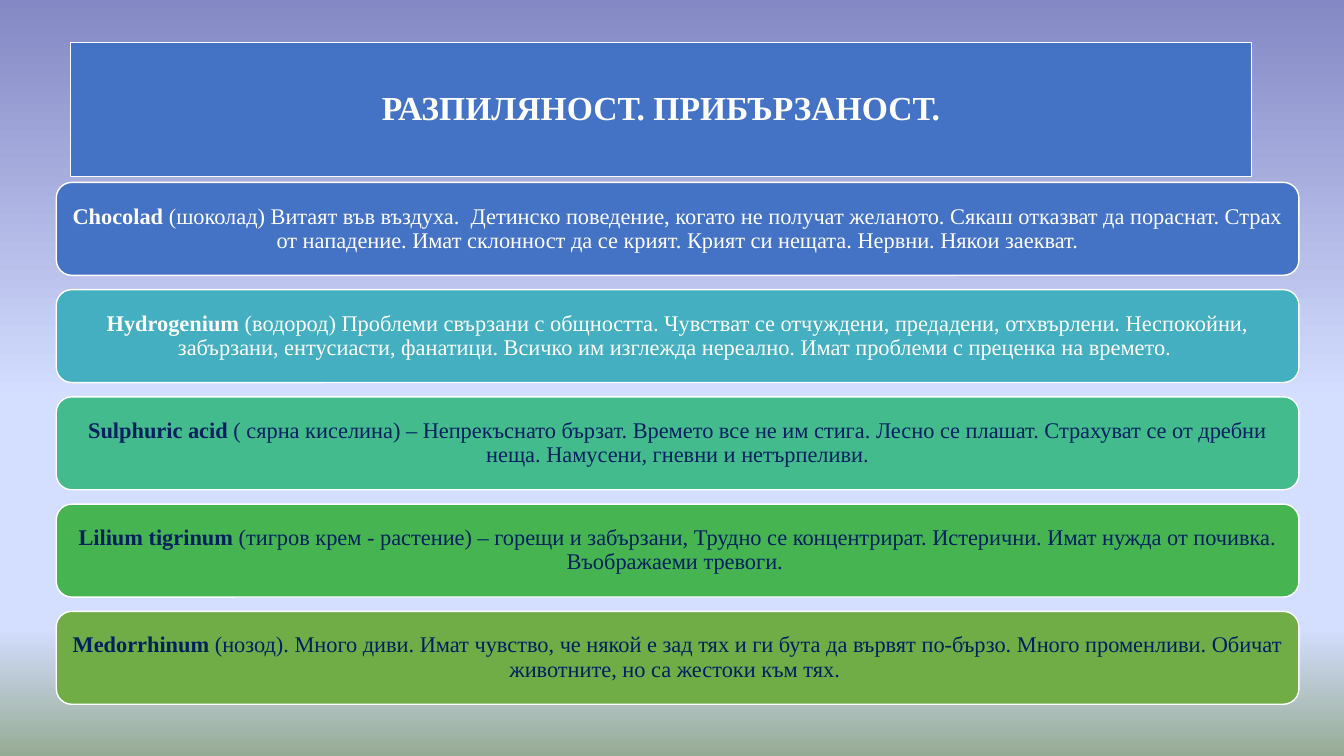
from dataclasses import dataclass

from lxml.etree import SubElement
from pptx import Presentation
from pptx.dml.color import RGBColor
from pptx.enum.shapes import MSO_SHAPE as Preset
from pptx.enum.text import MSO_ANCHOR as Anchor, MSO_AUTO_SIZE as AutoSize, PP_ALIGN as Align
from pptx.oxml.ns import qn
from pptx.shapes.autoshape import Shape
from pptx.slide import Slide
from pptx.util import Pt

FONT = "Times New Roman"
WHITE = RGBColor(0xFF, 0xFF, 0xFF)
NAVY = RGBColor(0x00, 0x20, 0x60)
BLUE = RGBColor(0x44, 0x72, 0xC4)
TEAL = RGBColor(0x43, 0xAF, 0xC0)
MINT = RGBColor(0x43, 0xBB, 0x8D)
GREEN = RGBColor(0x45, 0xB4, 0x51)
OLIVE = RGBColor(0x70, 0xAD, 0x47)
PERIWINKLE = RGBColor(0x84, 0x88, 0xC4)
PALE_BLUE = RGBColor(0xD4, 0xDE, 0xFF)
SAGE = RGBColor(0x96, 0xAB, 0x94)

# Background stops: percent from the top, colour
SKY = [(0, PERIWINKLE), (53, PALE_BLUE), (83, PALE_BLUE), (100, SAGE)]

BAR_LEFT, BAR_TOP = 40.2, 130.3
BAR_WIDTH, BAR_HEIGHT = 887.6, 66.4
BAR_PITCH = 76.6


@dataclass
class Remedy:
    name: str
    description: str
    fill: RGBColor
    ink: RGBColor


REMEDIES = [
    Remedy("Chocolad",
           " (шоколад) Витаят във въздуха.  Детинско поведение, когато не получат желаното. "
           "Сякаш отказват да пораснат. Страх от нападение. Имат склонност да се крият. "
           "Крият си нещата. Нервни. Някои заекват.", BLUE, WHITE),
    Remedy("Hydrogenium",
           " (водород) Проблеми свързани с общността. Чувстват се отчуждени, предадени, "
           "отхвърлени. Неспокойни, забързани, ентусиасти, фанатици. Всичко им изглежда "
           "нереално. Имат проблеми с преценка на времето. ", TEAL, WHITE),
    Remedy("Sulphuric acid",
           " ( сярна киселина) – Непрекъснато бързат. Времето все не им стига. Лесно се "
           "плашат. Страхуват се от дребни неща. Намусени, гневни и нетърпеливи.", MINT, NAVY),
    Remedy("Lilium tigrinum ",
           "(тигров крем - растение) – горещи и забързани, Трудно се концентрират. "
           "Истерични. Имат нужда от почивка. Въображаеми тревоги. ", GREEN, NAVY),
    Remedy("Medorrhinum",
           " (нозод). Много диви. Имат чувство, че някой е зад тях и ги бута да вървят "
           "по-бързо. Много променливи. Обичат животните, но са жестоки към тях. ", OLIVE, NAVY),
]


def paint_background(page: Slide) -> None:
    fill = page.background.fill
    fill.gradient()
    fill.gradient_angle = 270
    stops = page.element.find(".//" + qn("a:gsLst"))
    for stop in list(stops):
        stops.remove(stop)
    for percent, color in SKY:
        stop = SubElement(stops, qn("a:gs"), pos=str(percent * 1000))
        SubElement(stop, qn("a:srgbClr"), val=str(color))


def format_box(box: Shape, fill: RGBColor, ink: RGBColor, size: float, inset: float) -> None:
    """Apply the look shared by the title and the bars."""
    box.fill.solid()
    box.fill.fore_color.rgb = fill
    box.line.color.rgb = WHITE
    box.line.width = Pt(1)
    frame = box.text_frame
    frame.word_wrap = True
    frame.auto_size = AutoSize.NONE
    frame.vertical_anchor = Anchor.MIDDLE
    frame.margin_left = frame.margin_right = Pt(inset)
    frame.margin_top = frame.margin_bottom = Pt(inset)
    para = frame.paragraphs[0]
    para.alignment = Align.CENTER
    para.line_spacing = 0.9
    para.font.name = FONT
    para.font.size = Pt(size)
    para.font.color.rgb = ink


def add_title(page: Slide) -> None:
    title = page.shapes.title
    title.left, title.top, title.width, title.height = Pt(50.4), Pt(30.3), Pt(843.6), Pt(96)
    outline = SubElement(title.element.spPr, qn("a:prstGeom"), prst="roundRect")
    SubElement(outline, qn("a:avLst"))
    title.text_frame.text = "РАЗПИЛЯНОСТ. ПРИБЪРЗАНОСТ."
    format_box(title, BLUE, WHITE, 24, 7.2)
    title.text_frame.paragraphs[0].font.bold = True


def add_bar(page: Slide, remedy: Remedy, top: float) -> None:
    bar = page.shapes.add_shape(Preset.ROUNDED_RECTANGLE, Pt(BAR_LEFT), Pt(top),
                                Pt(BAR_WIDTH), Pt(BAR_HEIGHT))
    bar.shadow.inherit = False
    format_box(bar, remedy.fill, remedy.ink, 16, 4.8)
    para = bar.text_frame.paragraphs[0]
    for text, bold in ((remedy.name, True), (remedy.description, False)):
        span = para.add_run()
        span.text = text
        span.font.bold = bold


def main() -> None:
    deck = Presentation()
    deck.slide_width, deck.slide_height = Pt(960), Pt(540)
    page = deck.slides.add_slide(deck.slide_layouts.get_by_name("Title Only"))
    paint_background(page)
    add_title(page)
    for row, remedy in enumerate(REMEDIES):
        add_bar(page, remedy, BAR_TOP + row * BAR_PITCH)
    deck.save("out.pptx")


if __name__ == "__main__":
    main()
